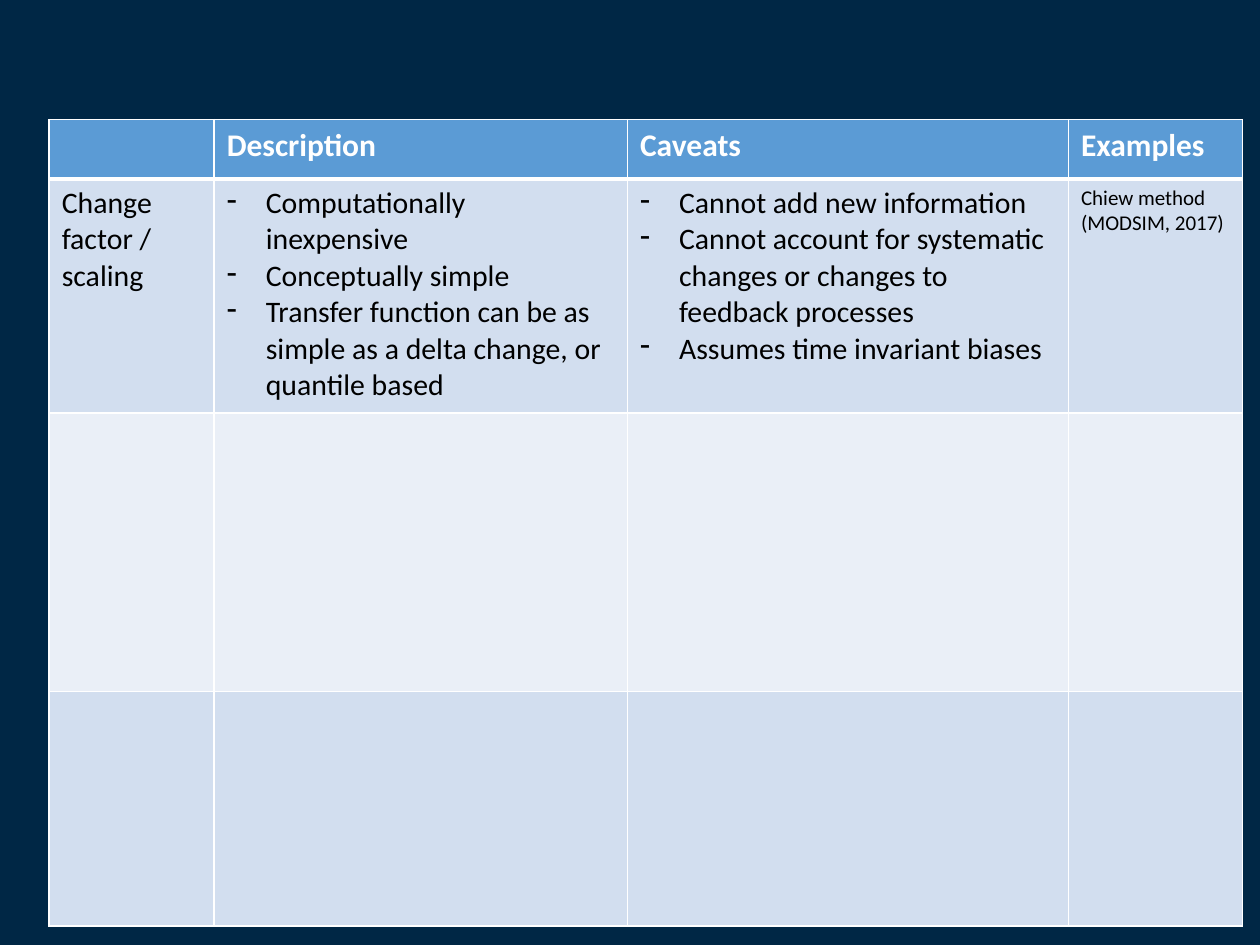
from lxml.etree import SubElement
from pptx import Presentation
from pptx.dml.color import RGBColor
from pptx.oxml.ns import qn
from pptx.util import Inches, Pt

COLORS = {
    "background": "002745",
    "header": "5B9BD5",
    "odd_row": "D2DEEF",
    "even_row": "EAEFF7",
    "border": "FFFFFF",
    "header_text": "FFFFFF",
    "body_text": "000000",
}
FONT = "Calibri"
COLUMN_WIDTHS = [1.31, 3.28, 3.5, 1.38]
ROW_HEIGHTS = [0.47, 1.86, 2.21, 1.86]
HEADINGS = ["Description", "Caveats", "Examples"]
DESCRIPTION = [
    "Computationally inexpensive",
    "Conceptually simple",
    "Transfer function can be as simple as a delta change, or quantile based",
]
CAVEATS = [
    "Cannot add new information",
    "Cannot account for systematic changes or changes to feedback processes",
    "Assumes time invariant biases",
]


def color(key):
    return RGBColor.from_string(COLORS[key])


def set_borders(cell, top, bottom):
    properties = cell._tc.get_or_add_tcPr()
    for side, width in (("lnL", 1), ("lnR", 1), ("lnT", top), ("lnB", bottom)):
        line = SubElement(properties, qn(f"a:{side}"), w=str(Pt(width)))
        fill = SubElement(line, qn("a:solidFill"))
        SubElement(fill, qn("a:srgbClr"), val=COLORS["border"])


def add_dash(paragraph):
    properties = paragraph._p.get_or_add_pPr()
    properties.set("marL", str(Inches(0.31)))
    properties.set("indent", str(-Inches(0.31)))
    SubElement(properties, qn("a:buChar"), char="-")


def write_cell(cell, lines, size, text_color="body_text", bold=False, dashed=False):
    frame = cell.text_frame
    for index, line in enumerate(lines):
        paragraph = frame.add_paragraph() if index else frame.paragraphs[0]
        if dashed:
            add_dash(paragraph)
        run = paragraph.add_run()
        run.text = line
        run.font.name = FONT
        run.font.size = Pt(size)
        run.font.bold = bold
        run.font.color.rgb = color(text_color)


def add_methods_table(slide):
    methods = slide.shapes.add_table(
        len(ROW_HEIGHTS), len(COLUMN_WIDTHS),
        Inches(0.39), Inches(0.95),
        Inches(sum(COLUMN_WIDTHS)), Inches(sum(ROW_HEIGHTS)),
    ).table
    for column, width in zip(methods.columns, COLUMN_WIDTHS):
        column.width = Inches(width)
    row_fills = ["header", "odd_row", "even_row", "odd_row"]
    for index, (row, height) in enumerate(zip(methods.rows, ROW_HEIGHTS)):
        row.height = Inches(height)
        for cell in row.cells:
            set_borders(cell, 3 if index == 1 else 1, 3 if index == 0 else 1)
            cell.fill.solid()
            cell.fill.fore_color.rgb = color(row_fills[index])
    return methods


def main():
    presentation = Presentation()
    presentation.slide_width = Inches(10)
    presentation.slide_height = Inches(7.5)
    slide = presentation.slides.add_slide(presentation.slide_layouts[6])
    slide.background.fill.solid()
    slide.background.fill.fore_color.rgb = color("background")

    methods = add_methods_table(slide)
    for column, heading in enumerate(HEADINGS, start=1):
        write_cell(methods.cell(0, column), [heading], 18, "header_text", bold=True)
    write_cell(methods.cell(1, 0), ["Change factor / scaling"], 17)
    write_cell(methods.cell(1, 1), DESCRIPTION, 17, dashed=True)
    write_cell(methods.cell(1, 2), CAVEATS, 17, dashed=True)
    write_cell(methods.cell(1, 3), ["Chiew method (MODSIM, 2017)"], 12)

    presentation.save("out.pptx")


if __name__ == "__main__":
    main()
